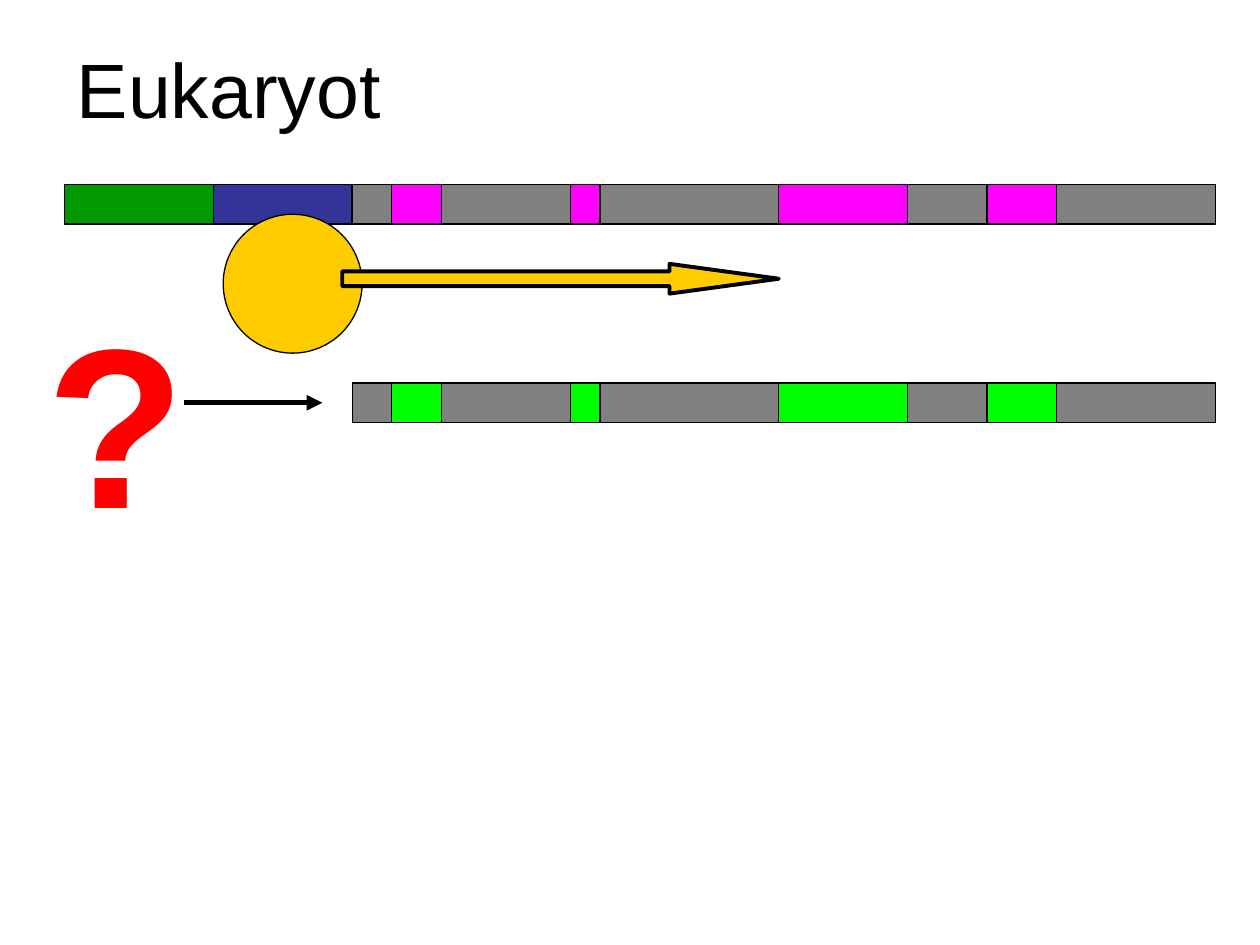
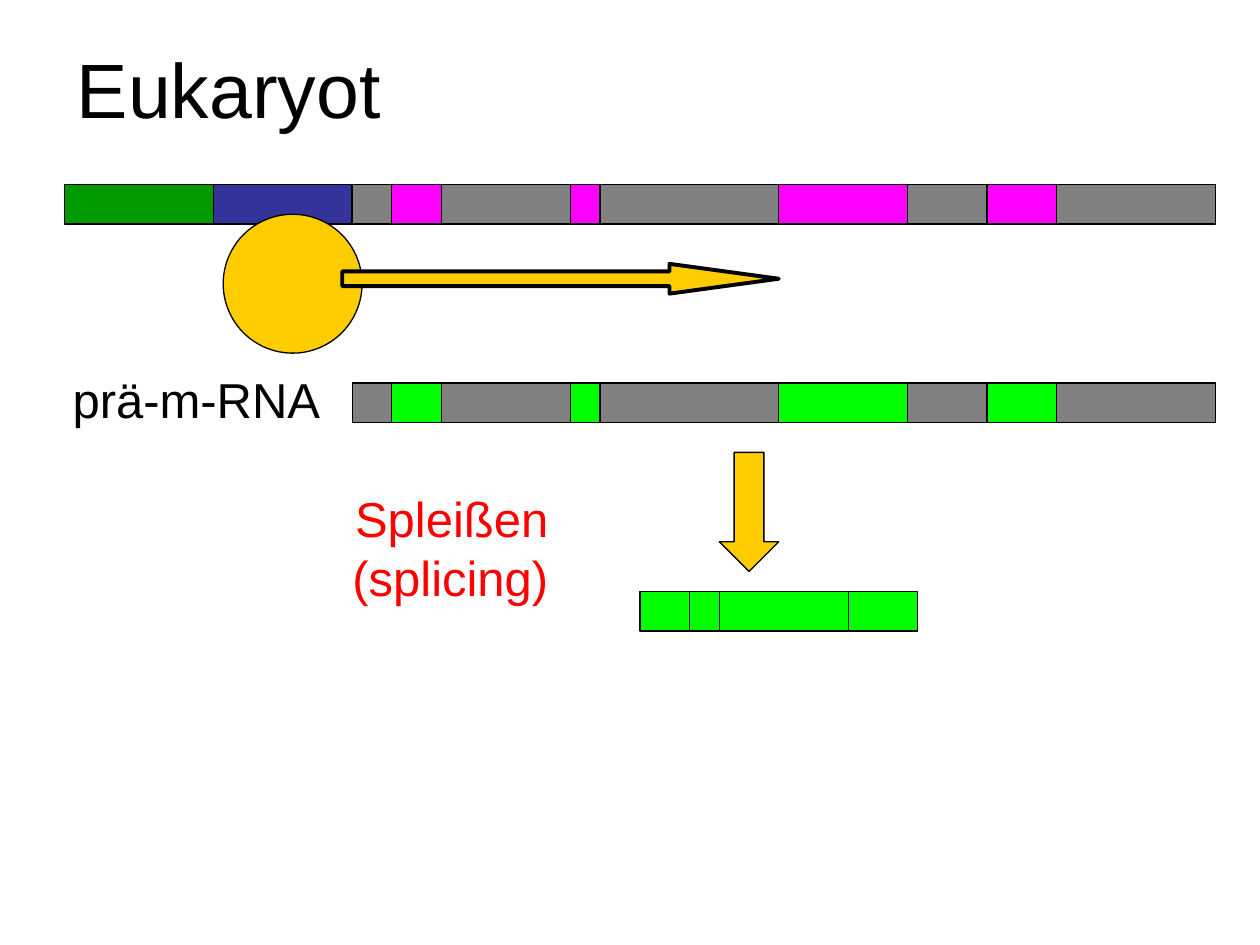
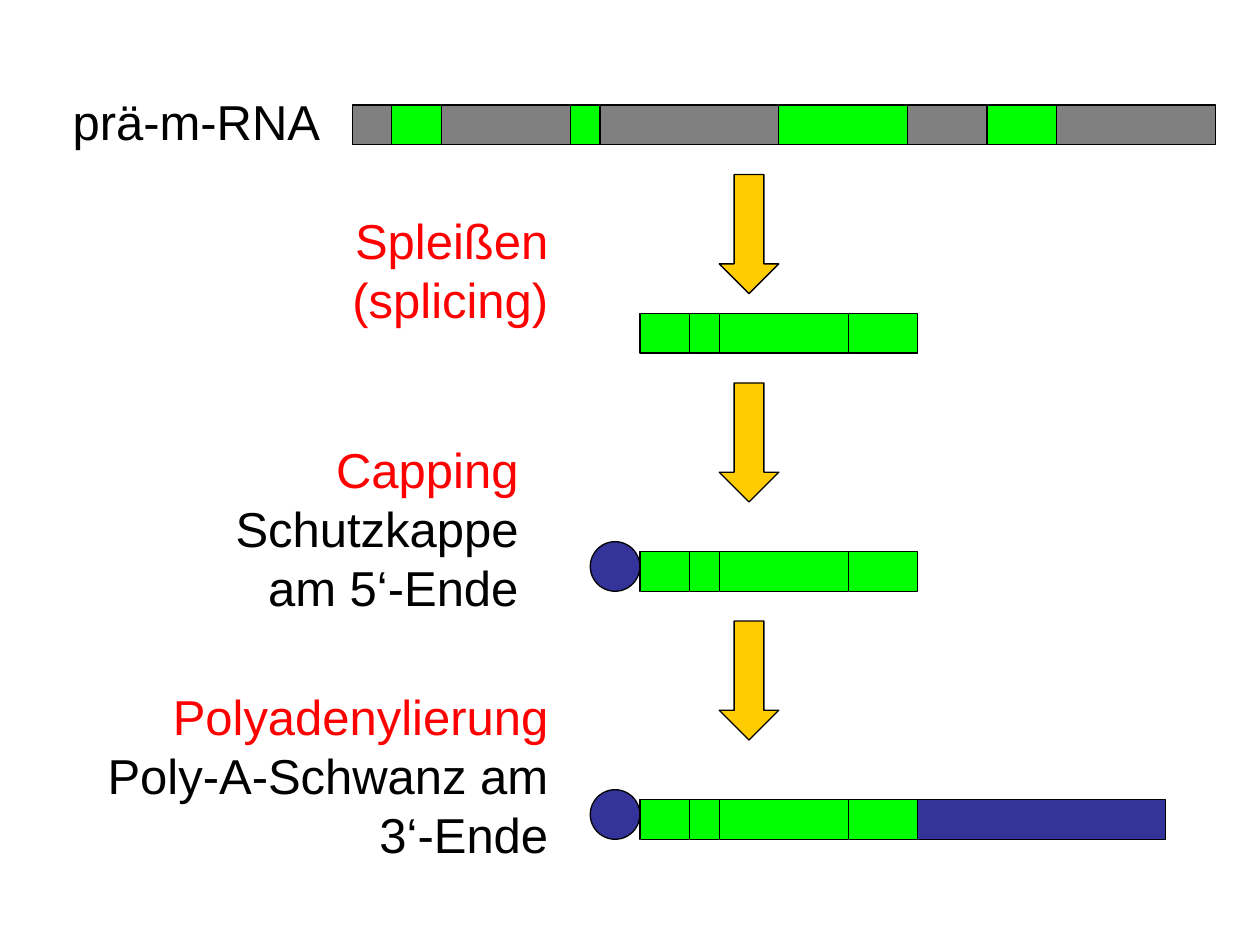
from lxml import etree
from pptx import Presentation
from pptx.dml.color import RGBColor
from pptx.enum.shapes import MSO_CONNECTOR, MSO_SHAPE as SHP
from pptx.enum.text import PP_ALIGN as AL
from pptx.oxml.ns import qn
from pptx.util import Cm, Pt

BLACK = RGBColor(0x00, 0x00, 0x00)
RED = RGBColor(0xFF, 0x00, 0x00)
GREEN = RGBColor(0x00, 0x99, 0x00)
BLUE = RGBColor(0x33, 0x33, 0x99)
GRAY = RGBColor(0x80, 0x80, 0x80)
PINK = RGBColor(0xFF, 0x00, 0xFF)
LIME = RGBColor(0x00, 0xFF, 0x00)
GOLD = RGBColor(0xFF, 0xCC, 0x00)

FONT = "Arial"
BAR_H = 0.8
GENE_X = 7.1
MRNA_X = 12.9
CAP_D = 1
EXONS = [1, 0.6, 2.6, 1.4]
INTRONS = [0.8, 2.6, 3.6, 1.6, 3.2]


def add_block(shapes, kind, x, y, w, h, fill, weight=0.75):
    sp = shapes.add_shape(kind, Cm(x), Cm(y), Cm(w), Cm(h))
    sp.shadow.inherit = False
    sp.fill.solid()
    sp.fill.fore_color.rgb = fill
    sp.line.color.rgb = BLACK
    sp.line.width = Pt(weight)
    return sp


def add_label(s, x, y, w, h, parts, size=28, align=AL.RIGHT, wrap=True):
    tf = s.shapes.add_textbox(Cm(x), Cm(y), Cm(w), Cm(h)).text_frame
    tf.word_wrap = wrap
    p = tf.paragraphs[0]
    p.alignment = align
    for text, color in parts:
        r = p.add_run()
        r.text = text
        r.font.name = FONT
        r.font.size = Pt(size)
        r.font.color.rgb = color
    return p


prs = Presentation()
prs.slide_width = Cm(25.4)
prs.slide_height = Cm(19.05)
question, splicing, processing = [
    prs.slides.add_slide(prs.slide_layouts[6]) for _ in range(3)
]

exon_widths = EXONS + [0]
dna, pre_mrna = [
    [seg for intron, exon in zip(INTRONS, exon_widths)
     for seg in ((intron, GRAY), (exon, color)) if seg[0]]
    for color in (PINK, LIME)
]
gene = [(3, GREEN), (2.8, BLUE)] + dna
mrna = [(w, LIME) for w in EXONS]

bars = [
    (question, 1.3, 3.72, gene),
    (question, GENE_X, 7.72, pre_mrna),
    (splicing, 1.3, 3.72, gene),
    (splicing, GENE_X, 7.72, pre_mrna),
    (splicing, MRNA_X, 11.92, mrna),
    (processing, GENE_X, 2.12, pre_mrna),
    (processing, MRNA_X, 6.32, mrna),
    (processing, MRNA_X, 11.12, mrna),
    (processing, MRNA_X, 16.12, mrna + [(5, BLUE)]),
]
for s, x, y, segments in bars:
    bar = s.shapes.add_group_shape()
    for w, color in segments:
        add_block(bar.shapes, SHP.RECTANGLE, x, y, w, BAR_H, color)
        x += w

for s in (question, splicing):
    add_label(s, 1.3, 0.72, 12.6, 2.1, [("Eukaryot", BLACK)], 44, AL.LEFT)
    polymerase = s.shapes.add_group_shape()
    add_block(polymerase.shapes, SHP.OVAL, 4.5, 4.32, 2.8, 2.8, GOLD)
    sp = add_block(polymerase.shapes, SHP.RIGHT_ARROW, 6.9, 5.32, 8.8, 0.6, GOLD, 2.25)
    sp.adjustments[1] = 3.67

for s, y in [(splicing, 9.12), (processing, 3.52), (processing, 7.72), (processing, 12.52)]:
    add_block(s.shapes, SHP.DOWN_ARROW, 14.5, y, 1.2, 2.4, GOLD)

for y in (11.12, 16.12):
    add_block(processing.shapes, SHP.OVAL, MRNA_X - CAP_D, y + BAR_H - CAP_D, CAP_D, CAP_D, BLUE)

p = add_label(question, 0.69, 5.54, 3.3, 5.77, [("?", RED)], 130, AL.LEFT, False)
p.runs[0].font.bold = True

line = question.shapes.add_connector(
    MSO_CONNECTOR.STRAIGHT, Cm(3.7), Cm(8.12), Cm(6.5), Cm(8.12))
line.line.color.rgb = BLACK
line.line.width = Pt(3)
etree.SubElement(line.line._get_or_add_ln(), qn("a:tailEnd"), type="triangle")
etree.SubElement(line._element.spPr, qn("a:effectLst"))

splice_text = [("Spleißen (splicing)", RED)]
for s, y, splice_x, splice_w in [(splicing, 7.32, 5.5, 5.8), (processing, 1.72, 6.1, 5.2)]:
    add_label(s, 1.1, y, 5.6, 1.45, [("prä-m-RNA", BLACK)])
    add_label(s, splice_x, y + 2.4, splice_w, 2.62, splice_text)

add_label(processing, 2.9, 8.74, 7.8, 3.8,
          [("Capping ", RED), ("Schutzkappe am 5‘-Ende", BLACK)])
add_label(processing, 1.5, 13.72, 9.8, 3.8,
          [("Polyadenylierung", RED), (" Poly-A-Schwanz am 3‘-Ende", BLACK)])

prs.save("out.pptx")
